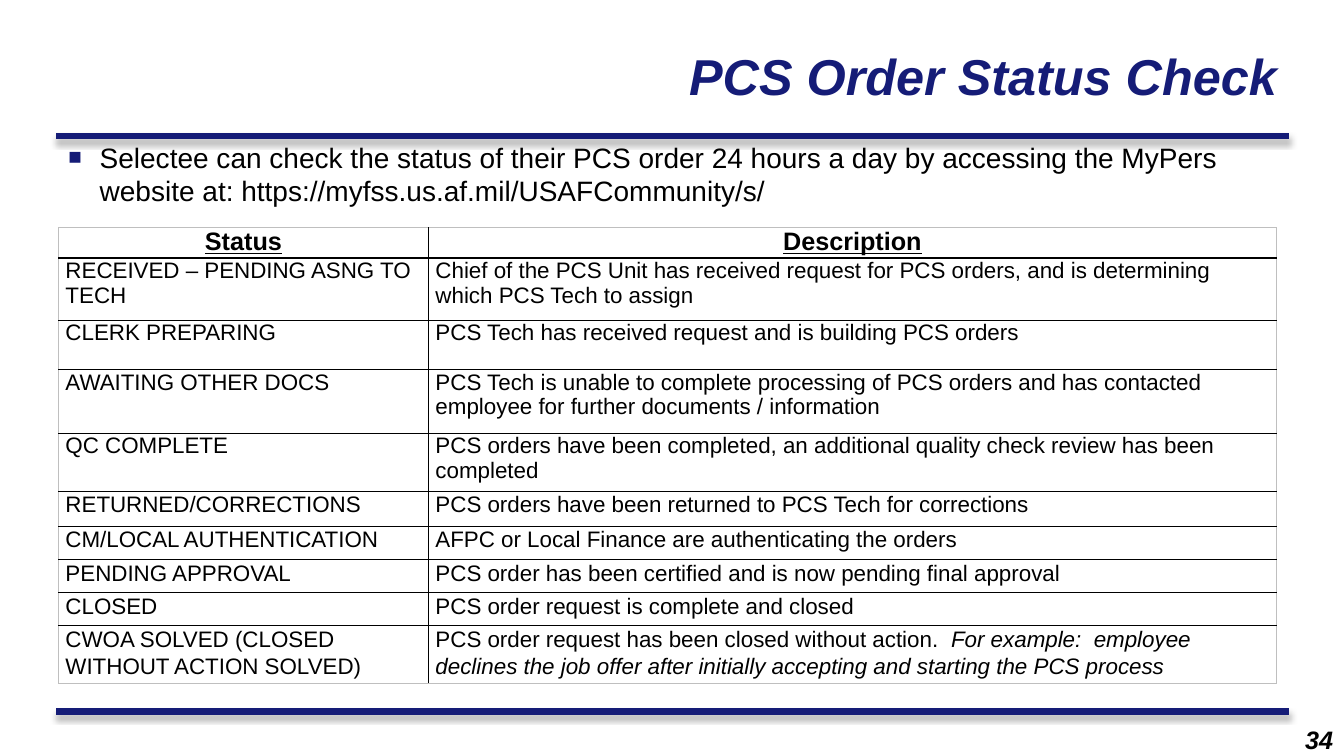
import pptx
import pptx.util
import pptx.dml.color
import pptx.enum.shapes
import pptx.enum.text
import pptx.oxml
import lxml.etree

PX = 9144  # 100 px to the inch
NAVY, BLACK, GRAY, WHITE = "151C77", "000000", "BFBFBF", "FFFFFF"
NS = "http://schemas.openxmlformats.org/drawingml/2006/main"
ALIGN = pptx.enum.text.PP_ALIGN

ROW_HEIGHTS = [28, 62, 49, 63, 58, 34, 33, 33, 33, 53]
ROWS = [
    ("Status", "Description"),
    ("RECEIVED – PENDING ASNG TO TECH",
     "Chief of the PCS Unit has received request for PCS orders, and is determining which PCS Tech to assign"),
    ("CLERK PREPARING", "PCS Tech has received request and is building PCS orders"),
    ("AWAITING OTHER DOCS",
     "PCS Tech is unable to complete processing of PCS orders and has contacted employee for further "
     "documents / information"),
    ("QC COMPLETE",
     "PCS orders have been completed, an additional quality check review has been completed"),
    ("RETURNED/CORRECTIONS", "PCS orders have been returned to PCS Tech for corrections"),
    ("CM/LOCAL AUTHENTICATION", "AFPC or Local Finance are authenticating the orders"),
    ("PENDING APPROVAL", "PCS order has been certified and is now pending final approval"),
    ("CLOSED", "PCS order request is complete and closed"),
    ("CWOA SOLVED (CLOSED WITHOUT ACTION SOLVED)",
     "PCS order request has been closed without action.\u00a0 "),
]
EXAMPLE = ("For example:  employee declines the job offer after initially accepting "
           "and starting the PCS process")
FIRST_SPACED_ROW = 6


def px(*lengths):
    return [pptx.util.Emu(n * PX) for n in lengths]


def rgb(color):
    return pptx.dml.color.RGBColor.from_string(color)


def add_xml(parent, xml):
    parent.append(pptx.oxml.parse_xml(xml.replace(">", f' xmlns:a="{NS}">', 1)))


def add_text(p, text, size=16, color=BLACK, bold=False, italic=False, underline=False, align=None):
    if align is not None:
        p.alignment = align
    r = p.add_run()
    r.text = text
    font = r.font
    font.name, font.size, font.color.rgb = "Arial", pptx.util.Pt(size), rgb(color)
    font.bold, font.italic, font.underline = bold, italic, underline


def add_box(slide, x, y, w, h):
    tf = slide.shapes.add_textbox(*px(x, y, w, h)).text_frame
    tf.word_wrap = True
    return tf


# Navy rule with a soft shadow
def add_rule(slide, x, y, w):
    line = slide.shapes.add_connector(
        pptx.enum.shapes.MSO_CONNECTOR.STRAIGHT, *px(x, y, x + w, y))
    line.line.color.rgb = rgb(NAVY)
    line.line.width = pptx.util.Pt(4.5)
    add_xml(line._element.spPr,
            '<a:effectLst><a:outerShdw blurRad="50800" dist="38100" dir="5400000" rotWithShape="0">'
            '<a:srgbClr val="000000"><a:alpha val="40000"/></a:srgbClr></a:outerShdw></a:effectLst>')


# Title, right aligned in the upper part of its box
def add_title(slide, x, y, w, h):
    tf = add_box(slide, x, y, w, h)
    tf.margin_right, tf.margin_bottom = px(25, 60)
    tf.vertical_anchor = pptx.enum.text.MSO_ANCHOR.MIDDLE
    add_text(tf.paragraphs[0], "PCS Order Status Check", size=36, color=NAVY,
             bold=True, italic=True, align=ALIGN.RIGHT)


# Introductory bullet
def add_intro(slide, x, y, w, h):
    p = add_box(slide, x, y, w, h).paragraphs[0]
    pPr = p._p.get_or_add_pPr()
    pPr.set("marL", str(31 * PX))
    pPr.set("indent", str(-31 * PX))
    add_xml(pPr, f'<a:buClr><a:srgbClr val="{NAVY}"/></a:buClr>')
    for tag, key, value in (("buSzPct", "val", "80000"), ("buFont", "typeface", "Arial"),
                            ("buChar", "char", "■")):
        lxml.etree.SubElement(pPr, f"{{{NS}}}{tag}").set(key, value)
    add_text(p, "Selectee can check the status of their PCS order 24 hours a day by accessing "
                "the MyPers website at:\u00a0https://myfss.us.af.mil/USAFCommunity/s/", size=20)


def set_borders(cell, outer):
    tcPr = cell._tc.get_or_add_tcPr()
    for side in "LRTB":
        color, width = (GRAY, 6350) if side in outer else (BLACK, 12700)
        add_xml(tcPr, f'<a:ln{side} w="{width}"><a:solidFill><a:srgbClr val="{color}"/>'
                      f'</a:solidFill></a:ln{side}>')


# Status table: black inner grid, light outer frame
def add_status_table(slide, x, y, w, status_w):
    shape = slide.shapes.add_table(len(ROWS), 2, *px(x, y, w, sum(ROW_HEIGHTS)))
    table = shape.table
    table.first_row = table.horz_banding = False
    table.columns[0].width, table.columns[1].width = px(status_w, w - status_w)
    last = len(ROWS) - 1
    for i, (texts, height) in enumerate(zip(ROWS, ROW_HEIGHTS)):
        table.rows[i].height = px(height)[0]
        for j, text in enumerate(texts):
            cell = table.cell(i, j)
            set_borders(cell, "LR"[j] + ("T" if i == 0 else "B" if i == last else ""))
            cell.fill.solid()
            cell.fill.fore_color.rgb = rgb(WHITE)
            cell.margin_left, cell.margin_right, cell.margin_top, cell.margin_bottom = px(7, 7, 0, 0)
            p = cell.text_frame.paragraphs[0]
            if i == 0:
                add_text(p, text, size=18, bold=True, underline=True, align=ALIGN.CENTER)
            else:
                add_text(p, text)
            if i >= FIRST_SPACED_ROW:
                p.line_spacing = 1.07
                p.space_after = pptx.util.Pt(8)
    add_text(table.cell(last, 1).text_frame.paragraphs[0], EXAMPLE, italic=True)


# Slide number
def add_number(slide, x, y, w, h):
    p = add_box(slide, x, y, w, h).paragraphs[0]
    add_text(p, "34", size=18, bold=True, italic=True, align=ALIGN.RIGHT)


def main():
    prs = pptx.Presentation()
    prs.slide_width, prs.slide_height = px(1333, 750)
    slide = prs.slides.add_slide(prs.slide_layouts[6])
    for y in (706, 135):
        add_rule(slide, 56, y, 1222)
    add_title(slide, 542, 53, 750, 98)
    add_intro(slide, 58, 134, 1208, 551)
    add_status_table(slide, 58, 226, 1208, 367)
    add_number(slide, 1165, 714, 167, 33)
    prs.save("out.pptx")


if __name__ == "__main__":
    main()
